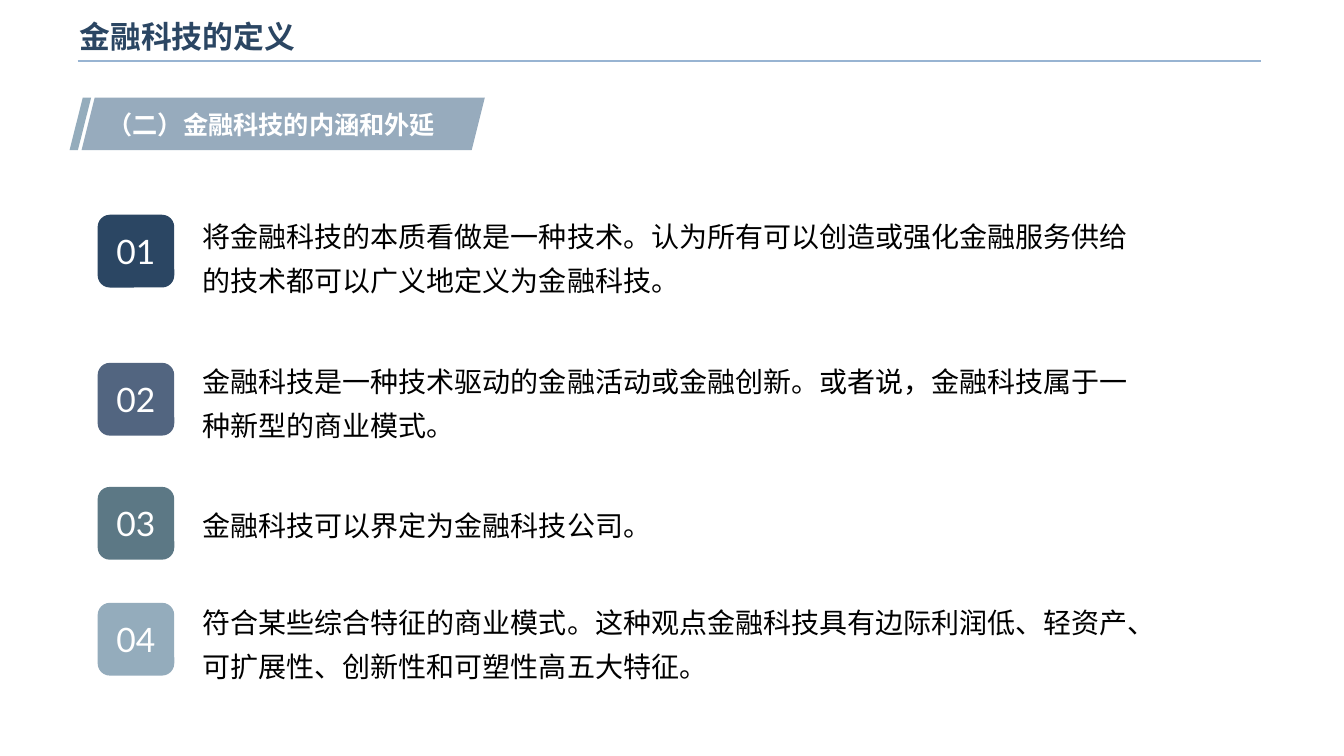
from lxml import etree
from pptx import Presentation
from pptx.dml.color import RGBColor
from pptx.enum.shapes import MSO_CONNECTOR, MSO_SHAPE
from pptx.enum.text import MSO_ANCHOR, PP_ALIGN
from pptx.oxml.ns import qn
from pptx.util import Pt

STRAIGHT = MSO_CONNECTOR.STRAIGHT
PARALLELOGRAM = MSO_SHAPE.PARALLELOGRAM
ROUNDED = MSO_SHAPE.ROUNDED_RECTANGLE
MIDDLE = MSO_ANCHOR.MIDDLE
LEFT, CENTER = PP_ALIGN.LEFT, PP_ALIGN.CENTER
CJK_FONT = "Noto Sans CJK SC"
COLORS = {
    "navy": "2B4663", "indigo": "526580", "teal": "5C7885", "mist": "94ACBC",
    "banner": "97ABBD", "rule": "98B4D2", "white": "FFFFFF", "black": "000000",
}


def write_text(shape, text, size, color, font=CJK_FONT, bold=False, align=LEFT, spacing=None):
    frame = shape.text_frame
    frame.word_wrap = True
    frame.text = text
    paragraph = frame.paragraphs[0]
    paragraph.alignment = align
    paragraph.line_spacing = spacing
    run = paragraph.runs[0]
    run.font.name = font
    run.font.size = Pt(size)
    run.font.bold = bold
    run.font.color.rgb = RGBColor.from_string(COLORS[color])
    east_asian = etree.SubElement(run.font._element, qn("a:ea"))
    east_asian.set("typeface", CJK_FONT)


def add_block(kind, left, top, width, height, color, adjustment):
    shape = slide.shapes.add_shape(kind, Pt(left), Pt(top), Pt(width), Pt(height))
    shape.adjustments[0] = adjustment
    shape.shadow.inherit = False
    shape.fill.solid()
    shape.fill.fore_color.rgb = RGBColor.from_string(COLORS[color])
    shape.line.fill.background()
    return shape


presentation = Presentation()
presentation.slide_width = Pt(960)
presentation.slide_height = Pt(540)
slide = presentation.slides.add_slide(presentation.slide_layouts[5])

title = slide.shapes.title
title.left, title.top, title.width, title.height = Pt(49.7), Pt(6.5), Pt(771), Pt(38)
write_text(title, "金融科技的定义", 22, "navy", font="Arial", bold=True)
title.text_frame.vertical_anchor = MIDDLE

rule = slide.shapes.add_connector(STRAIGHT, Pt(55.5), Pt(43.5), Pt(900.7), Pt(43.5))
rule.line.color.rgb = RGBColor.from_string(COLORS["rule"])
rule.line.width = Pt(1)
etree.SubElement(rule._element.spPr, qn("a:effectLst"))

add_block(PARALLELOGRAM, 49.7, 69.8, 15.4, 37.4, "mist", 0.613)
add_block(PARALLELOGRAM, 58.3, 69.8, 288, 37.4, "banner", 0.25)
heading = slide.shapes.add_textbox(Pt(69.8), Pt(74.2), Pt(268.6), Pt(29))
write_text(heading, "（二）金融科技的内涵和外延", 18, "white", bold=True)

points = [
    (153.4, 146.2, 692.6, 70, 1.3, "navy",
     "将金融科技的本质看做是一种技术。认为所有可以创造或强化金融服务供给的技术都可以广义地定义为金融科技。"),
    (259.2, 249.8, 692.6, 70, 1.3, "indigo",
     "金融科技是一种技术驱动的金融活动或金融创新。或者说，金融科技属于一种新型的商业模式。"),
    (347.8, 347.8, 480, 43, 1.5, "teal",
     "金融科技可以界定为金融科技公司。"),
    (430.6, 421.9, 692.6, 70, 1.3, "mist",
     "符合某些综合特征的商业模式。这种观点金融科技具有边际利润低、轻资产、可扩展性、创新性和可塑性高五大特征。"),
]
for number, (badge_top, text_top, width, height, spacing, color, text) in enumerate(points, 1):
    badge = add_block(ROUNDED, 69.8, badge_top, 54.7, 52, color, 0.167)
    write_text(badge, f"{number:02d}", 24, "white", font="Lato", align=CENTER)
    badge.text_frame.vertical_anchor = MIDDLE
    box = slide.shapes.add_textbox(Pt(137.5), Pt(text_top), Pt(width), Pt(height))
    write_text(box, text, 20, "black", spacing=spacing)

presentation.save("out.pptx")
